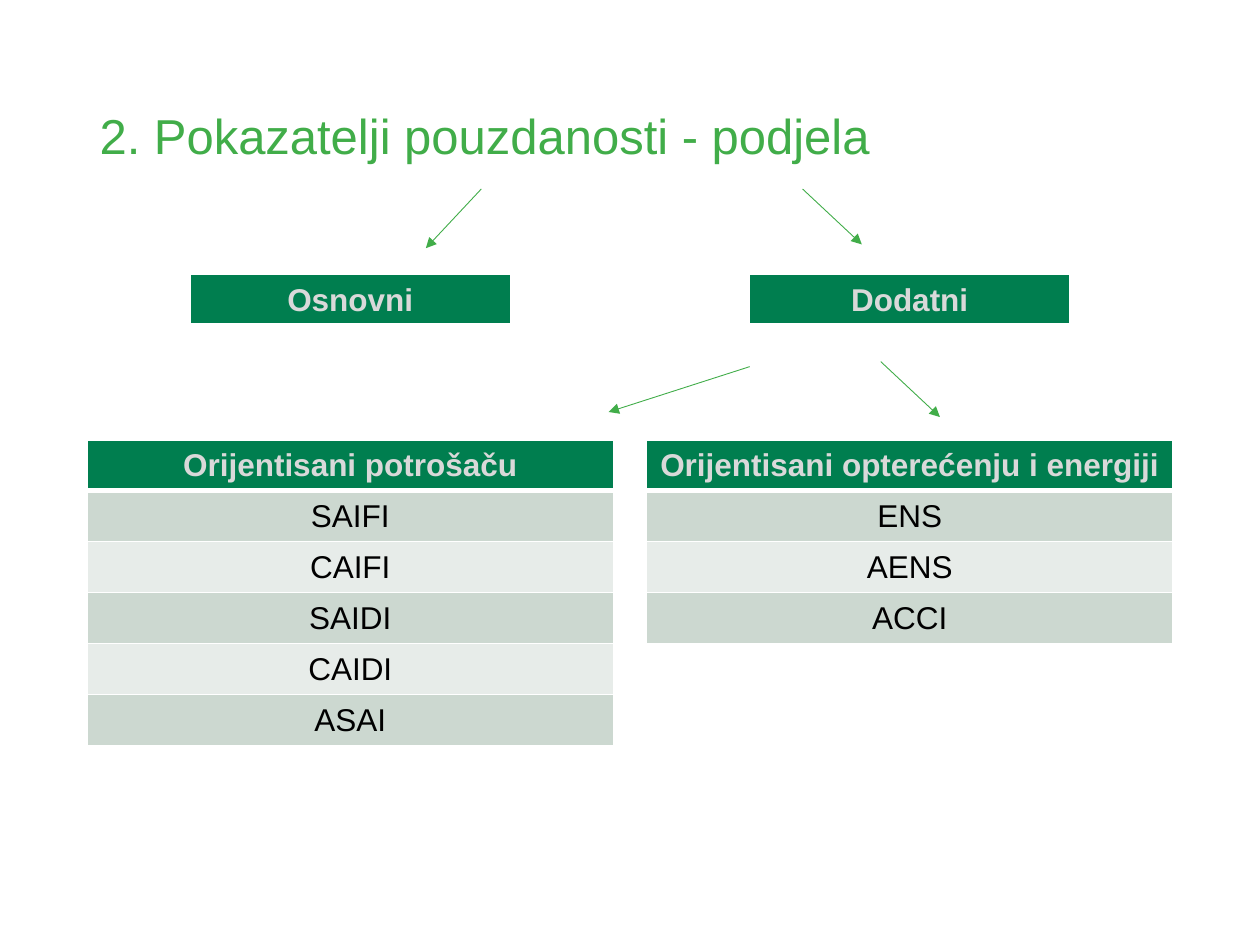
from dataclasses import dataclass

from lxml import etree
from pptx import Presentation
from pptx.dml.color import RGBColor
from pptx.enum.shapes import MSO_CONNECTOR
from pptx.enum.text import MSO_ANCHOR, PP_ALIGN
from pptx.oxml.ns import qn
from pptx.util import Inches, Pt

STRAIGHT = MSO_CONNECTOR.STRAIGHT
MIDDLE = MSO_ANCHOR.MIDDLE
LEFT, CENTER = PP_ALIGN.LEFT, PP_ALIGN.CENTER

LIME = RGBColor(0x41, 0xAD, 0x49)
GREEN = RGBColor(0x00, 0x7E, 0x4F)
GRAY = RGBColor(0xD9, 0xD9, 0xD9)
BLACK = RGBColor(0x00, 0x00, 0x00)
WHITE = RGBColor(0xFF, 0xFF, 0xFF)
BANDS = (RGBColor(0xCC, 0xD8, 0xD0), RGBColor(0xE7, 0xEC, 0xE9))

FONT = "Arial"
ROW = 1.62 / 4
THIN, THICK = 1, 3


@dataclass
class Group:
    left: float
    top: float
    width: float
    head: str
    items: tuple[str, ...] = ()


@dataclass
class Arrow:
    x1: float
    y1: float
    x2: float
    y2: float


GROUPS = (
    Group(1.51, 2.18, 2.54, "Osnovni"),
    Group(5.95, 2.18, 2.54, "Dodatni"),
    Group(5.13, 3.49, 4.18, "Orijentisani opterećenju i energiji",
          ("ENS", "AENS", "ACCI")),
    Group(0.69, 3.49, 4.18, "Orijentisani potrošaču",
          ("SAIFI", "CAIFI", "SAIDI", "CAIDI", "ASAI")),
)

ARROWS = (
    Arrow(3.82, 1.5, 3.38, 1.97),
    Arrow(6.37, 1.5, 6.84, 1.94),
    Arrow(5.95, 2.91, 4.83, 3.27),
    Arrow(6.99, 2.87, 7.46, 3.31),
)


def write(frame, text: str, *, size: float = 18, color: RGBColor = BLACK,
          bold: bool = False, align: PP_ALIGN = CENTER,
          spacing: float = 1.0) -> None:
    para = frame.paragraphs[0]
    para.alignment = align
    para.line_spacing = spacing
    run = para.add_run()
    run.text = text
    font = run.font
    font.name, font.size, font.bold = FONT, Pt(size), bold
    font.color.rgb = color


def add_edges(cell, top: float, bottom: float) -> None:
    """Draw white cell borders; call before the fill is set."""
    props = cell._tc.get_or_add_tcPr()
    edges = (("L", THIN), ("R", THIN), ("T", top), ("B", bottom))
    for side, width in edges:
        line = etree.SubElement(props, qn(f"a:ln{side}"), w=str(Pt(width)))
        fill = etree.SubElement(line, qn("a:solidFill"))
        etree.SubElement(fill, qn("a:srgbClr"), val=str(WHITE))


def add_group(slide, group: Group) -> None:
    texts = (group.head, *group.items)
    table = slide.shapes.add_table(
        len(texts), 1, Inches(group.left), Inches(group.top),
        Inches(group.width), Inches(ROW * len(texts))).table
    table.horz_banding = False
    for row, text in enumerate(texts):
        cell = table.cell(row, 0)
        head = row == 0
        add_edges(cell, THICK if row == 1 else THIN, THICK if head else THIN)
        cell.fill.solid()
        cell.fill.fore_color.rgb = GREEN if head else BANDS[(row - 1) % 2]
        cell.vertical_anchor = MIDDLE
        write(cell.text_frame, text, color=GRAY if head else BLACK, bold=head)


def add_arrow(slide, arrow: Arrow) -> None:
    link = slide.shapes.add_connector(
        STRAIGHT, Inches(arrow.x1), Inches(arrow.y1),
        Inches(arrow.x2), Inches(arrow.y2))
    link.line.color.rgb = LIME
    link.line.width = Pt(0.5)
    etree.SubElement(link.line._get_or_add_ln(), qn("a:tailEnd"),
                     type="triangle")
    etree.SubElement(link._element.spPr, qn("a:effectLst"))


def main() -> None:
    deck = Presentation()
    deck.slide_width, deck.slide_height = Inches(10), Inches(7.5)
    slide = deck.slides.add_slide(deck.slide_layouts[5])

    title = slide.shapes.title
    title.left, title.top = Inches(0.69), Inches(0.69)
    title.width, title.height = Inches(8.62), Inches(0.82)
    title.text_frame.vertical_anchor = MIDDLE
    write(title.text_frame, "2. Pokazatelji pouzdanosti - podjela",
          size=28, color=LIME, align=LEFT, spacing=0.9)

    for group in GROUPS:
        add_group(slide, group)
    for arrow in ARROWS:
        add_arrow(slide, arrow)
    deck.save("out.pptx")


if __name__ == "__main__":
    main()
